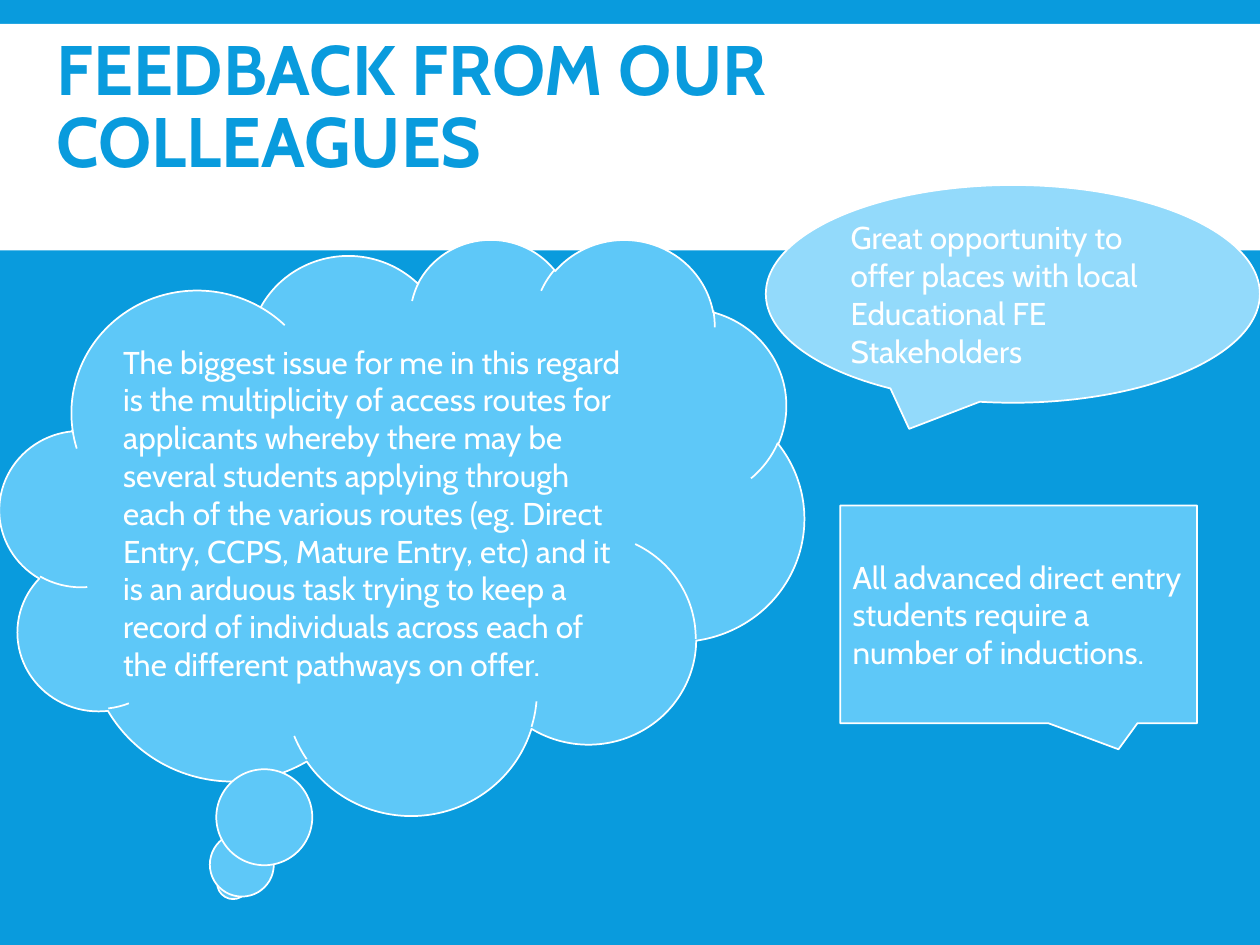
from pptx import Presentation
from pptx import util as u
from pptx.dml.color import RGBColor
from pptx.enum import shapes, text

BLUE, SKY, PALE, WHITE = "099BDD", "5EC8F8", "93DAFB", "FFFFFF"
FONT = "Cabin"


def paint(fill, colour):
    fill.solid()
    fill.fore_color.rgb = RGBColor.from_string(colour)


def write(shape, words, size=18, colour=WHITE, bold=False, spacing=1.0):
    frame = shape.text_frame
    frame.word_wrap = True
    frame.auto_size = text.MSO_AUTO_SIZE.NONE
    frame.vertical_anchor = text.MSO_ANCHOR.MIDDLE
    paragraph = frame.paragraphs[0]
    paragraph.alignment = text.PP_ALIGN.LEFT
    paragraph.line_spacing = spacing
    run = paragraph.add_run()
    run.text = words
    run.font.name = FONT
    run.font.size = u.Pt(size)
    run.font.bold = bold
    run.font.color.rgb = RGBColor.from_string(colour)


presentation = Presentation()
presentation.slide_width = u.Cm(25.4)
presentation.slide_height = u.Cm(19.05)
slide = presentation.slides.add_slide(presentation.slide_layouts[5])
paint(slide.background.fill, BLUE)

# White band behind the title
band = slide.shapes.add_shape(
    shapes.MSO_SHAPE.RECTANGLE, 0, u.Cm(0.48), u.Cm(25.4), u.Cm(4.57))
band.shadow.inherit = False
paint(band.fill, WHITE)
band.line.fill.background()

# Feedback callouts: kind, (left, top, width, height), fill, pointer, words
callouts = [
    (shapes.MSO_SHAPE.OVAL_CALLOUT, (15.44, 3.73, 9.96, 4.39), PALE, (-0.21, 0.62),
     "Great opportunity to offer places with local Educational FE Stakeholders"),
    (shapes.MSO_SHAPE.CLOUD_CALLOUT, (0, 4.8, 16.21, 11.61), SKY, (-0.21, 0.62),
     "The biggest issue for me in this regard is the multiplicity of access "
     "routes for applicants whereby there may be several students applying "
     "through each of the various routes (eg. Direct Entry, CCPS, Mature Entry, "
     "etc) and it is an arduous task trying to keep a record of individuals "
     "across each of the different pathways on offer."),
    (shapes.MSO_SHAPE.RECTANGULAR_CALLOUT, (16.94, 10.19, 7.19, 4.39), SKY, (0.28, 0.62),
     "All advanced direct entry students require a number of inductions."),
]
for kind, place, colour, pointer, words in callouts:
    callout = slide.shapes.add_shape(kind, *map(u.Cm, place))
    callout.shadow.inherit = False
    callout.adjustments[0], callout.adjustments[1] = pointer
    paint(callout.fill, colour)
    paint(callout.line.fill, WHITE)
    callout.line.width = u.Pt(1)
    write(callout, words)

# Title, brought in front of the band
title = slide.shapes.title
title.left, title.top = u.Cm(0.89), u.Cm(0.38)
title.width, title.height = u.Cm(21.89), u.Cm(3.68)
write(title, "FEEDBACK FROM OUR COLLEAGUES", size=40, colour=BLUE, bold=True, spacing=0.85)
slide.shapes._spTree.append(title._element)

presentation.save("out.pptx")
